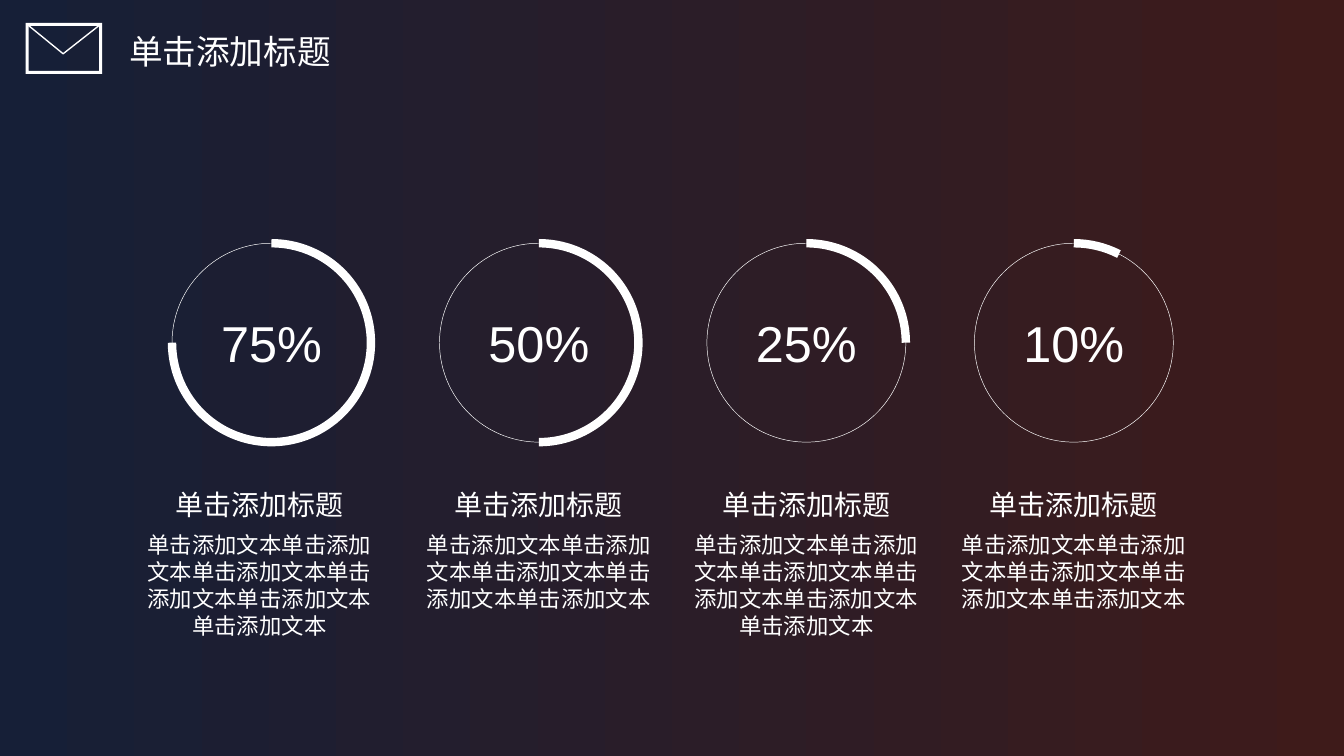
import lxml.etree
import pptx
import pptx.dml.color
import pptx.enum.shapes
import pptx.enum.text
import pptx.oxml.ns
import pptx.util

Inches = pptx.util.Inches
Pt = pptx.util.Pt
RGB = pptx.dml.color.RGBColor
Shape = pptx.enum.shapes.MSO_SHAPE
Align = pptx.enum.text.PP_ALIGN
Anchor = pptx.enum.text.MSO_ANCHOR
Fit = pptx.enum.text.MSO_AUTO_SIZE


class Theme:
    white = RGB.from_string("FFFFFF")
    navy = RGB.from_string("161F37")
    wine = RGB.from_string("3E1B1A")
    latin = "Arial"
    hans = "Noto Sans CJK SC"
    title, value, head, body = 18, 27, 15, 12
    pitch = 1.2  # line height relative to type size


def style(para, size, face, align):
    para.alignment = align
    font = para.font
    font.size = Pt(size)
    font.bold = False
    font.color.rgb = Theme.white
    font.name = face
    tag = pptx.oxml.ns.qn("a:ea")
    lxml.etree.SubElement(font._element, tag, typeface=Theme.hans)


def outline(shape, width):
    shape.shadow.inherit = False
    shape.fill.background()
    shape.line.color.rgb = Theme.white
    shape.line.width = Pt(width)


# Slide in 16:9
deck = pptx.Presentation()
deck.slide_width = Inches(10)
deck.slide_height = Inches(10) * 9 // 16
slide = deck.slides.add_slide(deck.slide_layouts[5])
shapes = slide.shapes

# Background
back = slide.background.fill
back.gradient()
back.gradient_angle = 0
for stop, color in zip(back.gradient_stops, (Theme.navy, Theme.wine)):
    stop.color.rgb = color

# Envelope icon
frame = shapes.add_shape(
    Shape.FRAME, Inches(0.19), Inches(0.17), Inches(0.57), Inches(0.38))
frame.adjustments[0] = 0.06
frame.shadow.inherit = False
frame.fill.solid()
frame.fill.fore_color.rgb = Theme.white
frame.line.fill.background()

pen = shapes.build_freeform(Inches(0.2), Inches(0.18))
pen.add_line_segments(
    [(Inches(0.47), Inches(0.4)), (Inches(0.75), Inches(0.18))], close=False)
outline(pen.convert_to_shape(), 0.75)

# Title
title = shapes.title
title.left, title.top = Inches(0.86), Inches(0.18)
title.width, title.height = Inches(2.16), Inches(0.4)
frame = title.text_frame
frame.text = "单击添加标题"
frame.auto_size = Fit.NONE
frame.vertical_anchor = Anchor.MIDDLE
style(frame.paragraphs[0], Theme.title, Theme.hans, Align.LEFT)

# Dials: value, arc sweep in degrees, body lines, caption offset
dials = [
    ("75%", 270, 4, -0.09),
    ("50%", 180, 3, 0),
    ("25%", 90, 4, 0),
    ("10%", 27, 3, 0),
]
lines = ["单击添加文本单击添加", "文本单击添加文本单击",
         "添加文本单击添加文本", "单击添加文本"]
size, step, wide = 1.48, 1.99, 1.88

for i, (value, sweep, count, shift) in enumerate(dials):
    left = 1.28 + i * step
    box = Inches(left), Inches(1.81), Inches(size), Inches(size)

    # Thin ring with the value
    ring = shapes.add_shape(Shape.OVAL, *box)
    outline(ring, 0.25)
    ring.text_frame.text = value
    ring.text_frame.vertical_anchor = Anchor.MIDDLE
    style(ring.text_frame.paragraphs[0], Theme.value, Theme.latin, Align.CENTER)

    # Thick arc, clockwise from the top (one degree is 0.6 units)
    arc = shapes.add_shape(Shape.ARC, *box)
    arc.adjustments[0] = 270 * 0.6
    arc.adjustments[1] = (270 + sweep) % 360 * 0.6
    outline(arc, 4.5)

    # Caption
    note = shapes.add_textbox(
        Inches(left + (size - wide) / 2 + shift), Inches(3.58),
        Inches(wide), Inches(0.44 + 0.2 * count))
    frame = note.text_frame
    frame.word_wrap = False
    frame.text = "\n".join(["单击添加标题"] + lines[:count])
    for j, para in enumerate(frame.paragraphs):
        points = Theme.body if j else Theme.head
        style(para, points, Theme.hans, Align.CENTER)
        para.line_spacing = Pt(points * Theme.pitch)
    frame.paragraphs[1].space_before = Pt(5.4)

deck.save("out.pptx")
